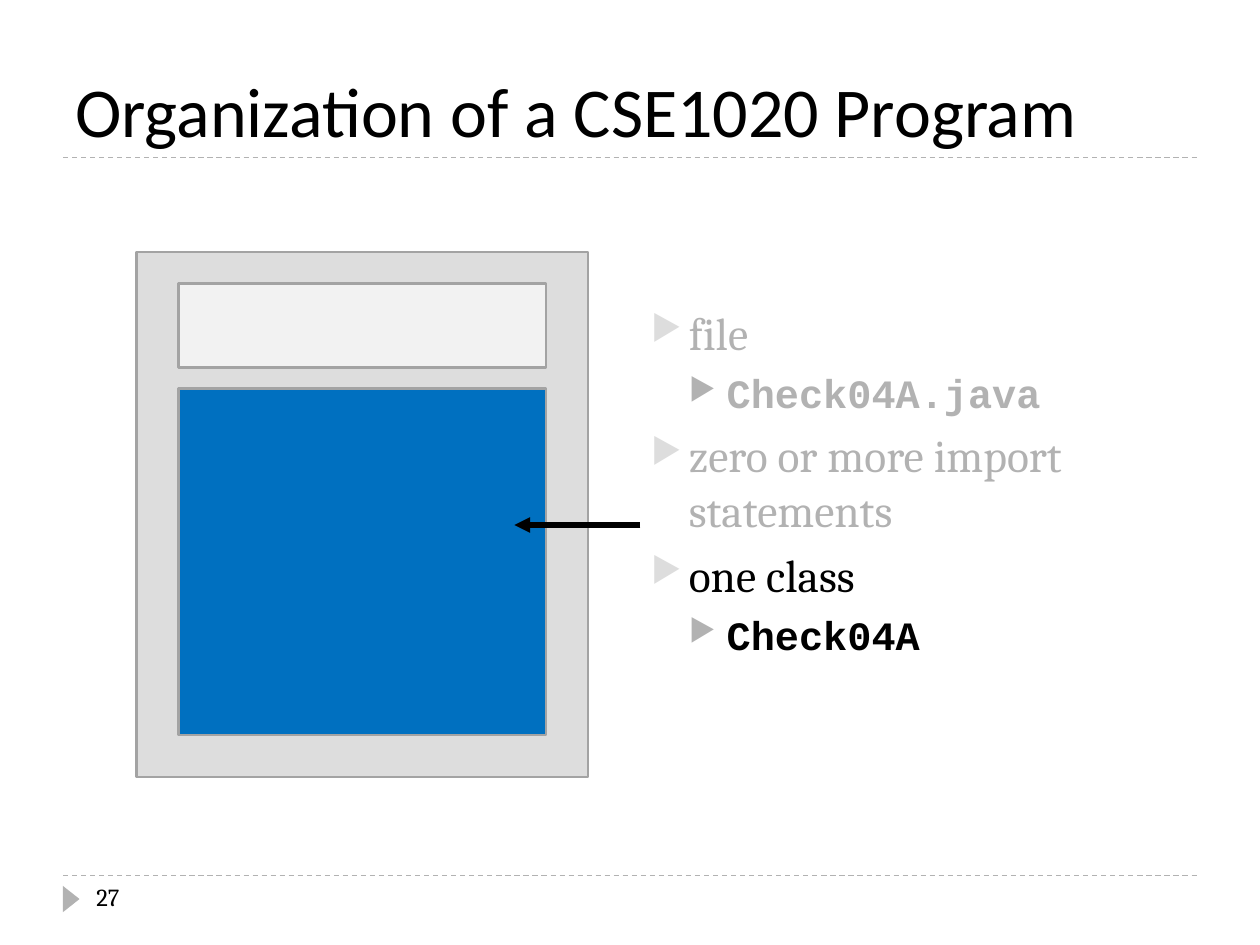
import dataclasses

import lxml.etree
import pptx
import pptx.dml.color
import pptx.enum.dml
import pptx.enum.shapes
import pptx.enum.text
import pptx.oxml.ns
import pptx.util

Pt = pptx.util.Pt
SHAPE = pptx.enum.shapes.MSO_SHAPE
ANCHOR = pptx.enum.text.MSO_ANCHOR
COLOR = {
    "black": "000000",
    "gray": "B2B2B2",
    "pale": "DDDDDD",
    "light": "F2F2F2",
    "edge": "A3A3A3",
    "blue": "0070C0",
}


@dataclasses.dataclass
class Box:
    left: float
    top: float
    width: float
    height: float
    fill: str


@dataclasses.dataclass
class Rule:
    start: float
    end: float
    y: float
    color: str
    weight: float
    dashed: bool = True


@dataclasses.dataclass
class Item:
    text: str
    color: str
    level: int = 0


@dataclasses.dataclass
class Level:
    font: str
    size: float
    bold: bool
    before: float
    bullet: str


LEVELS = [
    Level("Cambria", 26, False, 6, "pale"),
    Level("Courier New", 23, True, 5, "gray"),
]
INDENT = 21.6

FILE = Box(78, 144, 258, 300, "pale")
IMPORTS = Box(102, 162, 210, 48, "light")
CLASS = Box(102, 222, 210, 198, "blue")

ITEMS = [
    Item("file", "gray"),
    Item("Check04A.java", "gray", 1),
    Item("zero or more import statements", "gray"),
    Item("one class", "black"),
    Item("Check04A", "black", 1),
]


def shade(name: str) -> pptx.dml.color.RGBColor:
    return pptx.dml.color.RGBColor.from_string(COLOR[name])


def add_tag(parent, tag: str, **attrs: str):
    return lxml.etree.SubElement(parent, pptx.oxml.ns.qn(tag), attrs)


def draw_rule(slide, rule: Rule):
    line = slide.shapes.add_connector(
        pptx.enum.shapes.MSO_CONNECTOR.STRAIGHT,
        Pt(rule.start), Pt(rule.y), Pt(rule.end), Pt(rule.y))
    line.line.color.rgb = shade(rule.color)
    line.line.width = Pt(rule.weight)
    if rule.dashed:
        line.line.dash_style = pptx.enum.dml.MSO_LINE.DASH
    add_tag(line._element.spPr, "a:effectLst")
    return line


def draw_box(slide, box: Box, kind=SHAPE.RECTANGLE):
    shape = slide.shapes.add_shape(
        kind, Pt(box.left), Pt(box.top), Pt(box.width), Pt(box.height))
    shape.shadow.inherit = False
    shape.fill.solid()
    shape.fill.fore_color.rgb = shade(box.fill)
    shape.line.color.rgb = shade("edge")
    shape.line.width = Pt(1.5)
    return shape


def add_frame(slide, left: float, top: float, width: float, height: float,
              anchor=ANCHOR.TOP):
    frame = slide.shapes.add_textbox(
        Pt(left), Pt(top), Pt(width), Pt(height)).text_frame
    frame.word_wrap = True
    frame.vertical_anchor = anchor
    return frame


def add_run(para, text: str, font: str, size: float, color: str,
            bold: bool = False) -> None:
    run = para.add_run()
    run.text = text
    run.font.name = font
    run.font.size = Pt(size)
    run.font.bold = bold
    run.font.color.rgb = shade(color)


def add_item(para, item: Item, first: bool) -> None:
    level = LEVELS[item.level]
    para.level = item.level
    para.space_before = Pt(0 if first else level.before)
    props = para._p.get_or_add_pPr()
    props.set("marL", str(Pt(INDENT * (item.level + 1))))
    props.set("indent", str(-Pt(INDENT)))
    add_tag(add_tag(props, "a:buClr"), "a:srgbClr", val=COLOR[level.bullet])
    add_tag(props, "a:buSzPct", val="76000")
    add_tag(props, "a:buChar", char="▶")
    add_run(para, item.text, level.font, level.size, item.color, level.bold)


def main() -> None:
    deck = pptx.Presentation()
    deck.slide_width, deck.slide_height = Pt(720), Pt(540)
    slide = deck.slides.add_slide(deck.slide_layouts[6])

    # Dashed rules and page marker
    for y in (500.4, 90):
        draw_rule(slide, Rule(36, 684, y, "gray", 0.75))
    marker = draw_box(slide, Box(33.2, 509, 15, 9.5, "gray"),
                      SHAPE.ISOSCELES_TRIANGLE)
    marker.rotation = 90
    marker.line.fill.background()

    # Title and page number
    title = add_frame(slide, 36, 18, 648, 72, ANCHOR.BOTTOM)
    add_run(title.paragraphs[0], "Organization of a CSE1020 Program",
            "Calibri", 40, "black")
    page = add_frame(slide, 48, 500.4, 156, 28.8)
    add_run(page.paragraphs[0], "27", "Cambria", 14, "black")

    # Bulleted parts of a program
    body = add_frame(slide, 365, 171, 318, 313)
    for index, item in enumerate(ITEMS):
        para = body.add_paragraph() if index else body.paragraphs[0]
        add_item(para, item, index == 0)

    # File diagram, with the arrow pointing into the class
    for box in (FILE, IMPORTS, CLASS):
        draw_box(slide, box)
    arrow = draw_rule(slide, Rule(366, 294, 300, "black", 3, False))
    add_tag(arrow.line._get_or_add_ln(), "a:tailEnd", type="triangle")

    deck.save("out.pptx")


if __name__ == "__main__":
    main()
